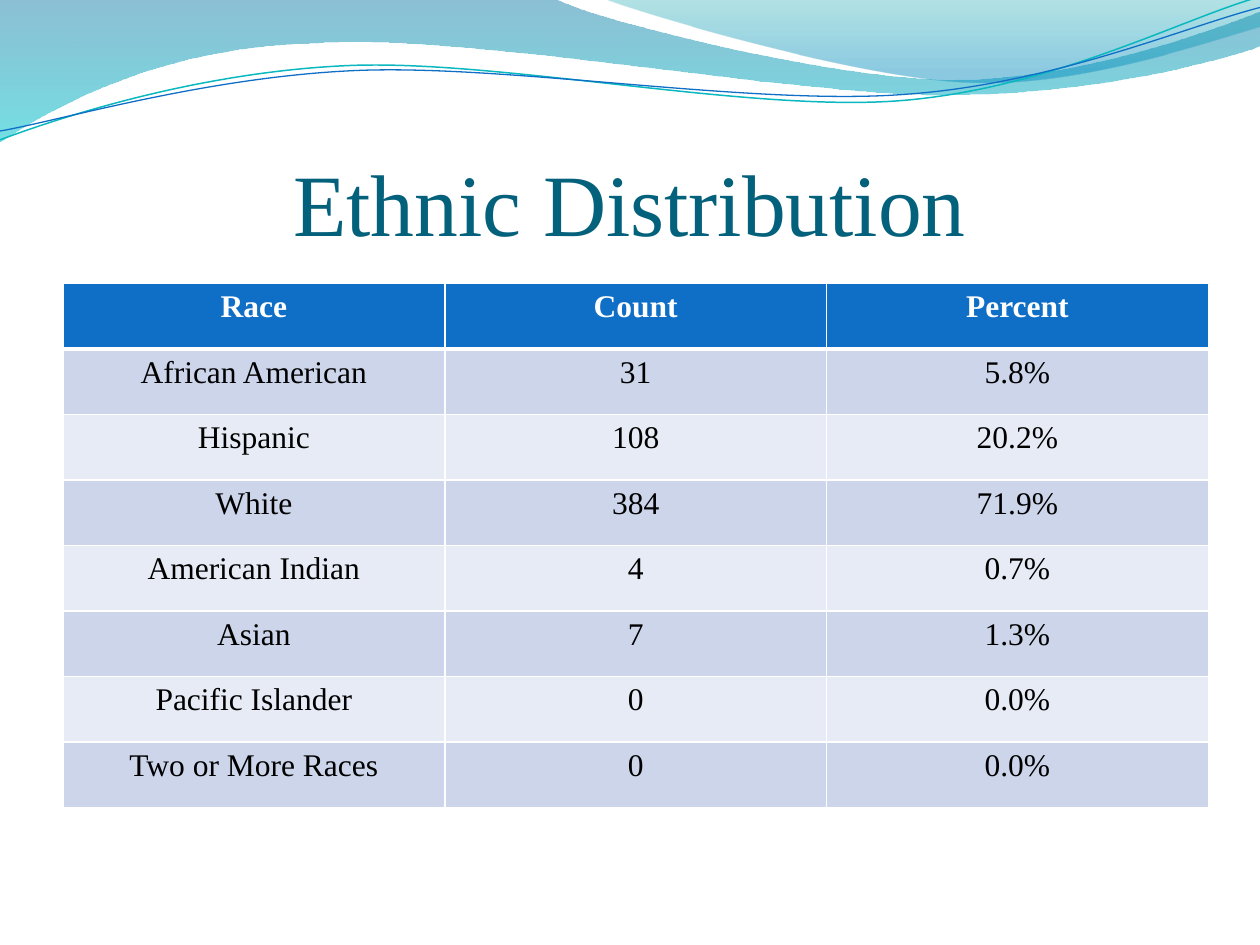
import math

import pptx
import pptx.dml.color
import pptx.enum.text
import pptx.oxml
import pptx.oxml.ns
import pptx.util
from pptx.util import Inches

COLOURS = {
    "title": "04617B", "header": "0F6FC6", "white": "FFFFFF", "text": "000000",
    "band_dark": "CCD5EA", "band_light": "E7EBF5",
    "teal_line": "0AB8BF", "blue_line": "0F6FC6",
    "deep_blue": "0074A1", "cyan": "00C6CF", "teal": "00A1A9", "sky": "008BBF",
}
FONT = "Times New Roman"
LINE_TILT = 357.3

FILLED_WAVES = [
    ([(0, 0), (4.4, -0.01), (4.76, 0.17, 6.64, 0.63, 7.58, 0.63),
      (8.53, 0.63, 9.58, 0.26, 10, 0.09), (10.01, 0.36),
      (9.83, 0.44, 8.7, 0.76, 7.46, 0.75), (6.22, 0.75, 3.82, 0.28, 2.57, 0.34),
      (1.29, 0.36, 0.46, 0.83, -0.01, 1.13), (0, 0)],
     [(0, "deep_blue", 45), (1, "cyan", 55)]),
    ([(4.79, -0.01), (5.09, 0.11, 6.82, 0.62, 7.69, 0.65),
      (8.56, 0.69, 9.61, 0.32, 10, 0.21), (10, 0), (4.79, -0.01)],
     [(0, "teal", 30), (0.8, "sky", 45)]),
]
LINE_WAVES = [
    ([(0, 1.11), (0.48, 0.93, 1.58, 0.57, 2.77, 0.52),
      (3.95, 0.47, 5.93, 0.89, 7.13, 0.8), (8.33, 0.71, 9.38, 0.15, 9.98, -0.02)],
     (4.99, 0.58), "teal_line", 0.85),
    ([(0, 1.04), (0.47, 0.96, 1.64, 0.61, 2.83, 0.56),
      (4.03, 0.51, 5.97, 0.84, 7.17, 0.75), (8.36, 0.67, 9.41, 0.21, 10, 0.06)],
     (5, 0.59), "blue_line", 0.75),
]
ROWS = [
    ("Race", "Count", "Percent"),
    ("African American", "31", "5.8%"),
    ("Hispanic", "108", "20.2%"),
    ("White", "384", "71.9%"),
    ("American Indian", "4", "0.7%"),
    ("Asian", "7", "1.3%"),
    ("Pacific Islander", "0", "0.0%"),
    ("Two or More Races", "0", "0.0%"),
]
ROW_HEIGHT = 0.52
COLUMN_WIDTH = 3.03


def colour(name):
    return pptx.dml.color.RGBColor.from_string(COLOURS[name])


def set_values(target, values):
    for name, value in values.items():
        setattr(target, name, value)


def write_text(frame, text, size, colour_name, bold=False):
    para = frame.paragraphs[0]
    para.alignment = pptx.enum.text.PP_ALIGN.CENTER
    span = para.add_run()
    span.text = text
    set_values(span.font, {"name": FONT, "size": pptx.util.Pt(size), "bold": bold})
    span.font.color.rgb = colour(colour_name)


def turn(point, centre, degrees):
    angle = math.radians(degrees)
    x, y = point[0] - centre[0], point[1] - centre[1]
    return (centre[0] + x * math.cos(angle) - y * math.sin(angle),
            centre[1] + x * math.sin(angle) + y * math.cos(angle))


def bend_segments(wave, segments):
    lines = iter(list(wave.element.iter(pptx.oxml.ns.qn("a:lnTo"))))
    for segment in segments[1:]:
        line = next(lines)
        if len(segment) == 6:
            curve = line.makeelement(pptx.oxml.ns.qn("a:cubicBezTo"))
            line.addprevious(curve)
            for part in (line, next(lines), next(lines)):
                curve.append(part[0])
                part.getparent().remove(part)


def add_wave(page, segments, closed, centre=(0, 0), tilt=0):
    points = [point for segment in segments for point in zip(segment[::2], segment[1::2])]
    corners = [(Inches(x), Inches(y))
               for x, y in (turn(point, centre, -tilt) for point in points)]
    builder = page.shapes.build_freeform(*corners[0])
    builder.add_line_segments(corners[1:], close=closed)
    wave = builder.convert_to_shape()
    bend_segments(wave, segments)
    wave.rotation = tilt
    wave.shadow.inherit = False
    return wave


def add_filled_wave(page, segments, stops):
    wave = add_wave(page, segments, True)
    wave.line.fill.background()
    wave.fill.gradient()
    wave.fill.gradient_angle = 270
    for stop, (position, name, _) in zip(wave.fill.gradient_stops, stops):
        stop.position = position
        stop.color.rgb = colour(name)
    tag = pptx.oxml.ns.qn("a:srgbClr")
    for node, (_, _, opacity) in zip(wave.element.spPr.iter(tag), stops):
        alpha = node.makeelement(pptx.oxml.ns.qn("a:alpha"), {"val": str(opacity * 1000)})
        node.append(alpha)


def add_line_wave(page, segments, centre, name, width):
    wave = add_wave(page, segments, False, centre, LINE_TILT)
    wave.fill.background()
    wave.line.color.rgb = colour(name)
    wave.line.width = pptx.util.Pt(width)


def format_title(page, text):
    title = page.shapes.title
    set_values(title, {"left": Inches(0.5), "top": Inches(0.77),
                       "width": Inches(9), "height": Inches(1.25)})
    set_values(title.text_frame, {
        "margin_left": 0, "margin_right": 0, "margin_top": Inches(0.05), "margin_bottom": 0,
        "word_wrap": True, "auto_size": pptx.enum.text.MSO_AUTO_SIZE.NONE,
        "vertical_anchor": pptx.enum.text.MSO_ANCHOR.BOTTOM})
    write_text(title.text_frame, text, 50, "title")


def add_borders(cell, widths):
    properties = cell._tc.get_or_add_tcPr()
    for side, width in widths.items():
        properties.append(pptx.oxml.parse_xml(
            f'<a:ln{side} {pptx.oxml.ns.nsdecls("a")} w="{pptx.util.Pt(width)}">'
            f'<a:solidFill><a:srgbClr val="{COLOURS["white"]}"/></a:solidFill></a:ln{side}>'))


def add_race_table(page):
    frame = page.shapes.add_table(
        len(ROWS), len(ROWS[0]), Inches(0.5), Inches(2.25),
        Inches(COLUMN_WIDTH * len(ROWS[0])), Inches(ROW_HEIGHT * len(ROWS)))
    for row, values in enumerate(ROWS):
        header = row == 0
        fill = "header" if header else ("band_light", "band_dark")[row % 2]
        borders = {"L": 1, "R": 1, "T": 3 if row == 1 else 1, "B": 3 if header else 1}
        for column, value in enumerate(values):
            cell = frame.table.cell(row, column)
            add_borders(cell, borders)
            cell.fill.solid()
            cell.fill.fore_color.rgb = colour(fill)
            write_text(cell.text_frame, value, 18, "white" if header else "text", header)


def main():
    deck = pptx.Presentation()
    set_values(deck, {"slide_width": Inches(10), "slide_height": Inches(7.5)})
    page = deck.slides.add_slide(deck.slide_layouts[5])
    for wave in FILLED_WAVES:
        add_filled_wave(page, *wave)
    for wave in LINE_WAVES:
        add_line_wave(page, *wave)
    format_title(page, "Ethnic Distribution")
    add_race_table(page)
    deck.save("out.pptx")


if __name__ == "__main__":
    main()
